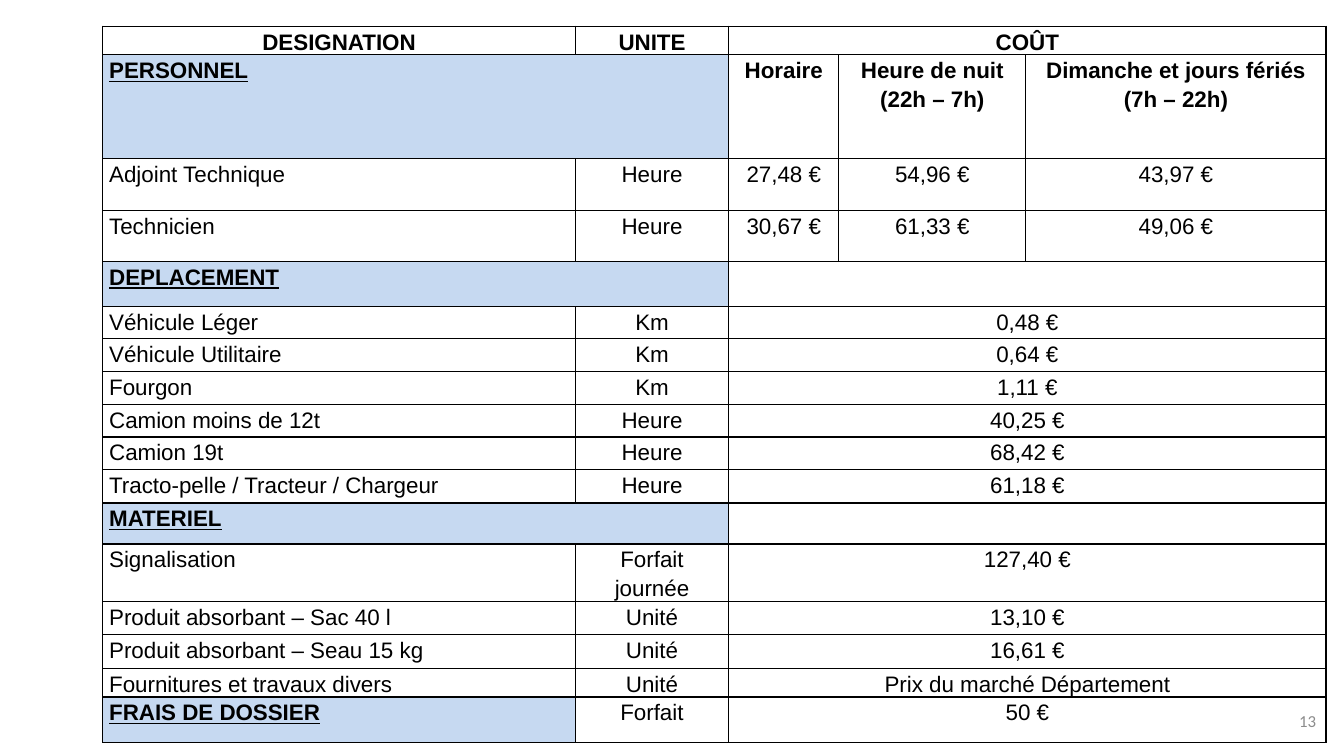
from lxml import etree
from pptx import Presentation, util as u
from pptx.dml import color
from pptx.enum import text
from pptx.oxml import ns

PX = 9525  # EMU in one px
BLACK, BLUE, GREY = "000000", "C6D9F1", "8C8C8C"
LEFT, CENTER, RIGHT = text.PP_ALIGN.LEFT, text.PP_ALIGN.CENTER, text.PP_ALIGN.RIGHT

COLUMNS = [450, 146, 105, 178, 286]
COST = 2  # first of the three cost columns

# Row height, then the texts; a row with fewer texts has one merged cost cell
ROWS = [
    (24, "DESIGNATION", "UNITE", "COÛT"),
    (99, "PERSONNEL", "", "Horaire", "Heure de nuit\n(22h – 7h)",
     "Dimanche et jours fériés\n(7h – 22h)"),
    (49, "Adjoint Technique", "Heure", "27,48 €", "54,96 €", "43,97 €"),
    (49, "Technicien", "Heure", "30,67 €", "61,33 €", "49,06 €"),
    (43, "DEPLACEMENT", "", ""),
    (30, "Véhicule Léger", "Km", "0,48 €"),
    (32, "Véhicule Utilitaire", "Km", "0,64 €"),
    (31, "Fourgon", "Km", "1,11 €"),
    (31, "Camion moins de 12t", "Heure", "40,25 €"),
    (31, "Camion 19t", "Heure", "68,42 €"),
    (32, "Tracto-pelle / Tracteur / Chargeur", "Heure", "61,18 €"),
    (39, "MATERIEL", "", ""),
    (49, "Signalisation", "Forfait journée", "127,40 €"),
    (32, "Produit absorbant – Sac 40 l", "Unité", "13,10 €"),
    (32, "Produit absorbant – Seau 15 kg", "Unité", "16,61 €"),
    (25, "Fournitures et travaux divers", "Unité", "Prix du marché Département"),
    (43, "FRAIS DE DOSSIER", "Forfait", "50 €"),
]
HEADER_ROWS = 2
SECTIONS = {"PERSONNEL", "DEPLACEMENT", "MATERIEL", "FRAIS DE DOSSIER"}


def px(length):
    return u.Emu(length * PX)


def rgb(value):
    return color.RGBColor.from_string(value)


def write(para, words, font, size, ink, align, bold=False, underline=False):
    para.alignment = align
    span = para.add_run()
    span.text = words
    span.font.name = font
    span.font.size = u.Pt(size)
    span.font.color.rgb = rgb(ink)
    span.font.bold = bold
    span.font.underline = underline


def add_borders(cell):
    properties = cell._tc.get_or_add_tcPr()
    for index, side in enumerate(("lnL", "lnR", "lnT", "lnB")):
        line = etree.Element(ns.qn("a:" + side), w=str(u.Pt(1)))
        fill = etree.SubElement(line, ns.qn("a:solidFill"))
        etree.SubElement(fill, ns.qn("a:srgbClr"), val=BLACK)
        properties.insert(index, line)


def style_cell(cell, shaded):
    cell.margin_left = cell.margin_right = px(6)
    cell.margin_top = cell.margin_bottom = 0
    if shaded:
        cell.fill.solid()
        cell.fill.fore_color.rgb = rgb(BLUE)
    else:
        cell.fill.background()
    add_borders(cell)


def fill_cell(cell, words, align, bold, underline):
    frame = cell.text_frame
    for index, line in enumerate(words.split("\n")):
        para = frame.add_paragraph() if index else frame.paragraphs[0]
        para.line_spacing = 1.15
        if line:
            write(para, line, "Arial", 16, BLACK, align, bold, underline)
        else:
            para.font.size = u.Pt(16)


def add_price_table(page):
    heights = [row[0] for row in ROWS]
    table = page.shapes.add_table(
        len(ROWS), len(COLUMNS), px(98), px(25),
        px(sum(COLUMNS)), px(sum(heights))).table
    table.first_row = table.horz_banding = False
    for column, width in zip(table.columns, COLUMNS):
        column.width = px(width)

    for r, (height, *texts) in enumerate(ROWS):
        table.rows[r].height = px(height)
        section = texts[0] in SECTIONS
        wide_title = section and not texts[1]
        for c in range(len(COLUMNS)):
            shaded = section and (c == 0 or (wide_title and c == 1))
            style_cell(table.cell(r, c), shaded)

        # Merged cells
        if wide_title:
            table.cell(r, 0).merge(table.cell(r, 1))
        if len(texts) < len(COLUMNS):
            table.cell(r, COST).merge(table.cell(r, len(COLUMNS) - 1))

        # Texts
        for c, words in enumerate(texts):
            if c == 1 and wide_title:
                continue
            title = section and c == 0
            align = LEFT if c == 0 and r > 0 else CENTER
            fill_cell(table.cell(r, c), words, align,
                      title or r < HEADER_ROWS, title)


def add_page_number(page, number):
    box = page.shapes.add_textbox(px(1216), px(667), px(47), px(38))
    frame = box.text_frame
    frame.word_wrap = True
    frame.vertical_anchor = text.MSO_ANCHOR.MIDDLE
    write(frame.paragraphs[0], number, "Calibri", 12, GREY, RIGHT)


def main():
    deck = Presentation()
    deck.slide_width, deck.slide_height = px(1280), px(720)
    page = deck.slides.add_slide(deck.slide_layouts[6])
    add_price_table(page)
    add_page_number(page, "13")
    deck.save("out.pptx")


if __name__ == "__main__":
    main()
